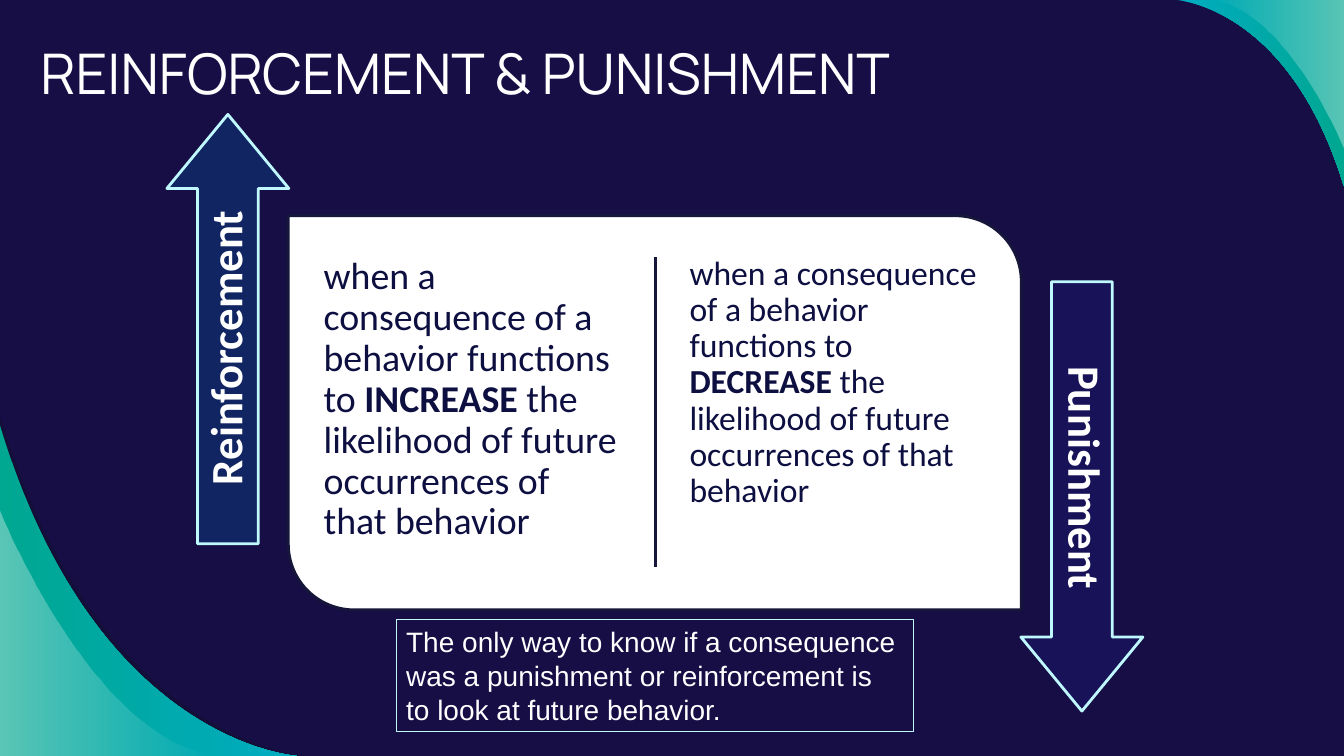
from lxml.etree import SubElement
from pptx import Presentation
from pptx.dml.color import RGBColor
from pptx.enum.shapes import MSO_CONNECTOR, MSO_SHAPE
from pptx.enum.text import MSO_ANCHOR, MSO_AUTO_SIZE, PP_ALIGN
from pptx.oxml.ns import qn
from pptx.util import Inches, Pt

NAVY, INK, TEXT_NAVY = "160E44", "15163A", "0D0F41"
WHITE, ICE, CYAN, GREEN = "FFFFFF", "C0F8FF", "00ACC2", "00A791"


def rgb(color):
    return RGBColor.from_string(color)


def set_alphas(shape, alphas):
    """Give each fill colour, in order, its opacity in percent."""
    colors = shape._element.spPr.iter(qn("a:srgbClr"))
    for color, alpha in zip(list(colors), alphas):
        SubElement(color, qn("a:alpha")).set("val", str(alpha * 1000))


def bend_outline(shape):
    """Turn the first three segments into one cubic curve."""
    outline = next(shape._element.spPr.iter(qn("a:path")))
    segments = outline.findall(qn("a:lnTo"))[:3]
    curve = SubElement(outline, qn("a:cubicBezTo"))
    segments[0].addprevious(curve)
    for segment in segments:
        curve.append(segment[0])
        outline.remove(segment)


def add_wave(slide, curve, corner, colors, alphas):
    """Fill the area between a curve and a slide corner, left to right."""
    start, *rest = [tuple(map(Inches, point)) for point in (*curve, corner)]
    builder = slide.shapes.build_freeform(*start, scale=1.0)
    builder.add_line_segments(rest, close=True)
    shape = builder.convert_to_shape()
    bend_outline(shape)
    shape.shadow.inherit = False
    shape.line.fill.background()
    if len(colors) == 1:
        shape.fill.solid()
        shape.fill.fore_color.rgb = rgb(colors[0])
    else:
        shape.fill.gradient()
        shape.fill.gradient_angle = 0
        for stop, color in zip(shape.fill.gradient_stops, colors):
            stop.color.rgb = rgb(color)
    set_alphas(shape, alphas)


def add_panel(slide, kind, box, fill, line, width, adjustments=(), alpha=100, rotation=0):
    shape = slide.shapes.add_shape(kind, *map(Inches, box))
    shape.shadow.inherit = False
    shape.rotation = rotation
    for index, value in enumerate(adjustments):
        shape.adjustments[index] = value
    if fill:
        shape.fill.solid()
        shape.fill.fore_color.rgb = rgb(fill)
        if alpha < 100:
            set_alphas(shape, [alpha])
    else:
        shape.fill.background()
    shape.line.color.rgb = rgb(line)
    shape.line.width = Pt(width)
    return shape


def write_text(shape, runs, font, size, color, inset=0.1, align=PP_ALIGN.LEFT,
               anchor=MSO_ANCHOR.TOP, spacing=1.0):
    """Write one paragraph from (text, bold) runs."""
    frame = shape.text_frame
    frame.word_wrap = True
    frame.auto_size = MSO_AUTO_SIZE.NONE
    frame.vertical_anchor = anchor
    frame.margin_left = frame.margin_right = Inches(max(inset, 0.1))
    frame.margin_top = frame.margin_bottom = Inches(inset)
    paragraph = frame.paragraphs[0]
    paragraph.alignment = align
    paragraph.line_spacing = spacing
    for text, bold in runs:
        run = paragraph.add_run()
        run.text = text
        run.font.name = font
        run.font.size = Pt(size)
        run.font.bold = bold
        run.font.color.rgb = rgb(color)


def add_definition(slide, left, effect, size, inset):
    box = slide.shapes.add_textbox(*map(Inches, (left, 2.44, 3.15, 3.32)))
    runs = [("when a consequence of a behavior functions to ", False), (effect, True),
            (" the likelihood of future occurrences of that behavior", False)]
    write_text(box, runs, "Calibri", size, TEXT_NAVY, inset, spacing=0.9)


def add_labelled_arrow(slide, label, arrow_at, label_at, rotation, fill, alpha):
    add_panel(slide, MSO_SHAPE.RIGHT_ARROW, (*arrow_at, 4.26, 1.21), fill, ICE, 2,
              (0.498, 0.607), alpha, rotation)
    box = slide.shapes.add_textbox(*map(Inches, (*label_at, 3.9, 0.6)))
    box.rotation = rotation
    write_text(box, [(label, True)], "Calibri", 32, WHITE, 0.13,
               PP_ALIGN.CENTER, MSO_ANCHOR.MIDDLE, 0.9)


def add_divider(slide, x, top, bottom):
    line = slide.shapes.add_connector(
        MSO_CONNECTOR.STRAIGHT, *map(Inches, (x, top, x, bottom)))
    line.line.color.rgb = rgb(INK)
    line.line.width = Pt(2)
    SubElement(line._element.spPr, qn("a:effectLst"))


def add_waves(slide):
    bottom_left, top_right = (0, 7.5), (13.33, 0)
    waves = [
        (((0, 4.13), (0.98, 7.39), (3.03, 7.5), (3.03, 7.5)), bottom_left, ["12102F"], [54]),
        (((0, 4.22), (0.95, 7.39), (2.95, 7.5), (2.95, 7.5)), bottom_left, [GREEN, CYAN], []),
        (((0, 5.06), (0, 5.06), (0.91, 7.35), (2.16, 7.5)), bottom_left, [WHITE, WHITE], [36, 0]),
        (((11.67, 0), (11.67, 0), (12.79, 0.06), (13.33, 1.85)), top_right, [CYAN, GREEN], []),
        (((12.01, 0), (12.77, 0.09), (13.33, 1.49), (13.33, 1.49)), top_right,
         [WHITE, WHITE], [0, 36]),
    ]
    for wave in waves:
        add_wave(slide, *wave)


def main():
    presentation = Presentation()
    presentation.slide_width, presentation.slide_height = Inches(13.33), Inches(7.5)
    slide = presentation.slides.add_slide(presentation.slide_layouts[5])
    slide.background.fill.solid()
    slide.background.fill.fore_color.rgb = rgb(NAVY)
    add_waves(slide)

    # Title
    title = slide.shapes.title
    title.left, title.top, title.width, title.height = map(Inches, (0.3, 0.28, 10.26, 0.92))
    write_text(title, [("REINFORCEMENT & PUNISHMENT", False)], "Manrope", 40, WHITE)

    # Definitions card
    add_panel(slide, MSO_SHAPE.ROUND_2_DIAG_RECTANGLE, (2.86, 2.14, 7.27, 3.91),
              WHITE, INK, 2, (0, 0.167))
    add_divider(slide, 6.5, 2.55, 5.63)
    add_definition(slide, 3.1, "INCREASE", 27, 0.11)
    add_definition(slide, 6.74, "DECREASE", 24, 0.1)

    # Side arrows
    add_labelled_arrow(slide, "Reinforcement", (0.13, 2.66), (0.31, 3.15), 270, "0070C0", 24)
    add_labelled_arrow(slide, "Punishment", (8.6, 4.32), (8.79, 4.44), 90, "1F249B", 23)

    # Closing note
    note = add_panel(slide, MSO_SHAPE.RECTANGLE, (3.93, 6.15, 5.13, 1.11), None, ICE, 0.75)
    write_text(note, [("The only way to know if a consequence was a punishment or "
                       "reinforcement is to look at future behavior.", False)],
               "Arial", 20, WHITE, 0.05)
    note.text_frame.auto_size = MSO_AUTO_SIZE.SHAPE_TO_FIT_TEXT

    presentation.save("out.pptx")


if __name__ == "__main__":
    main()
